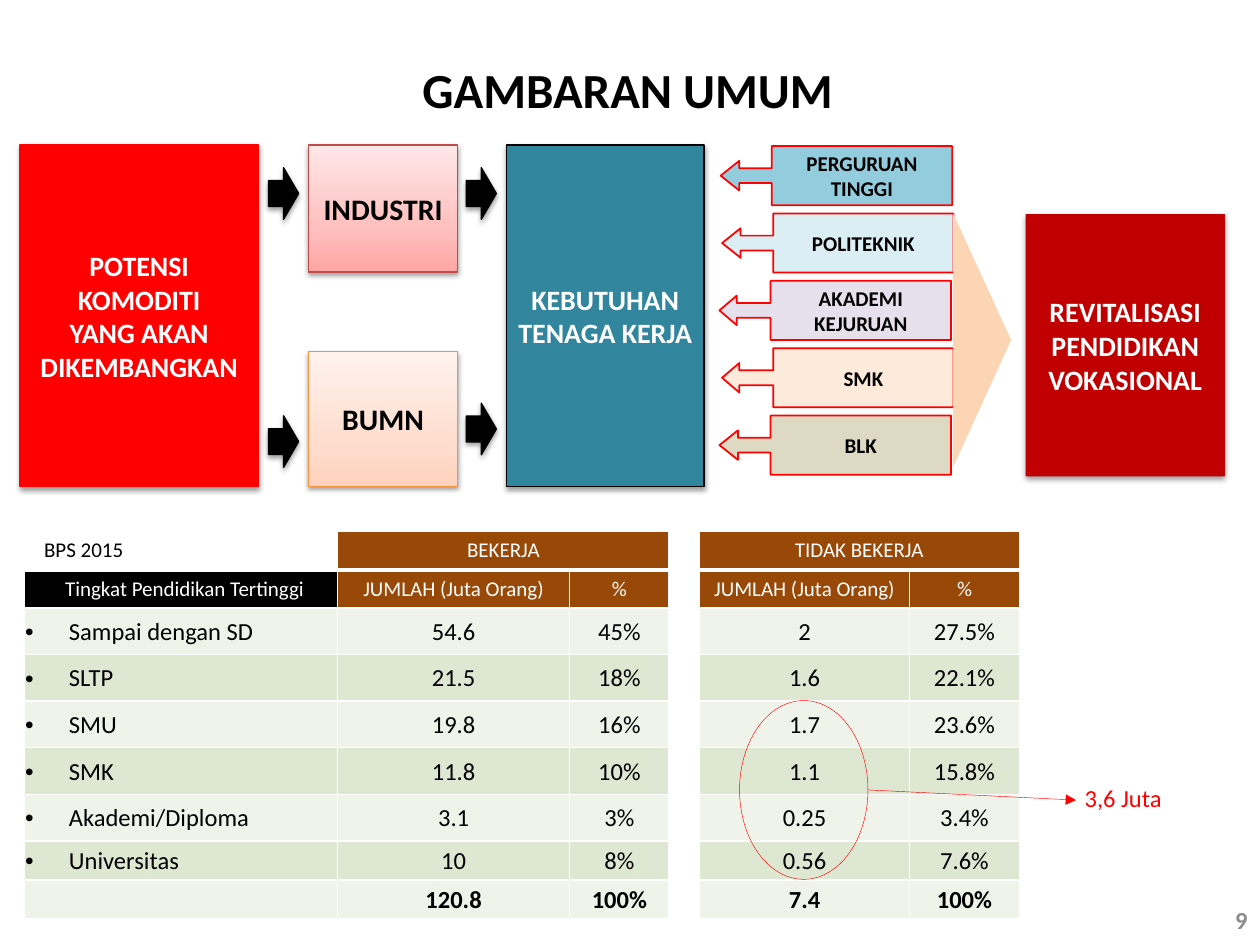
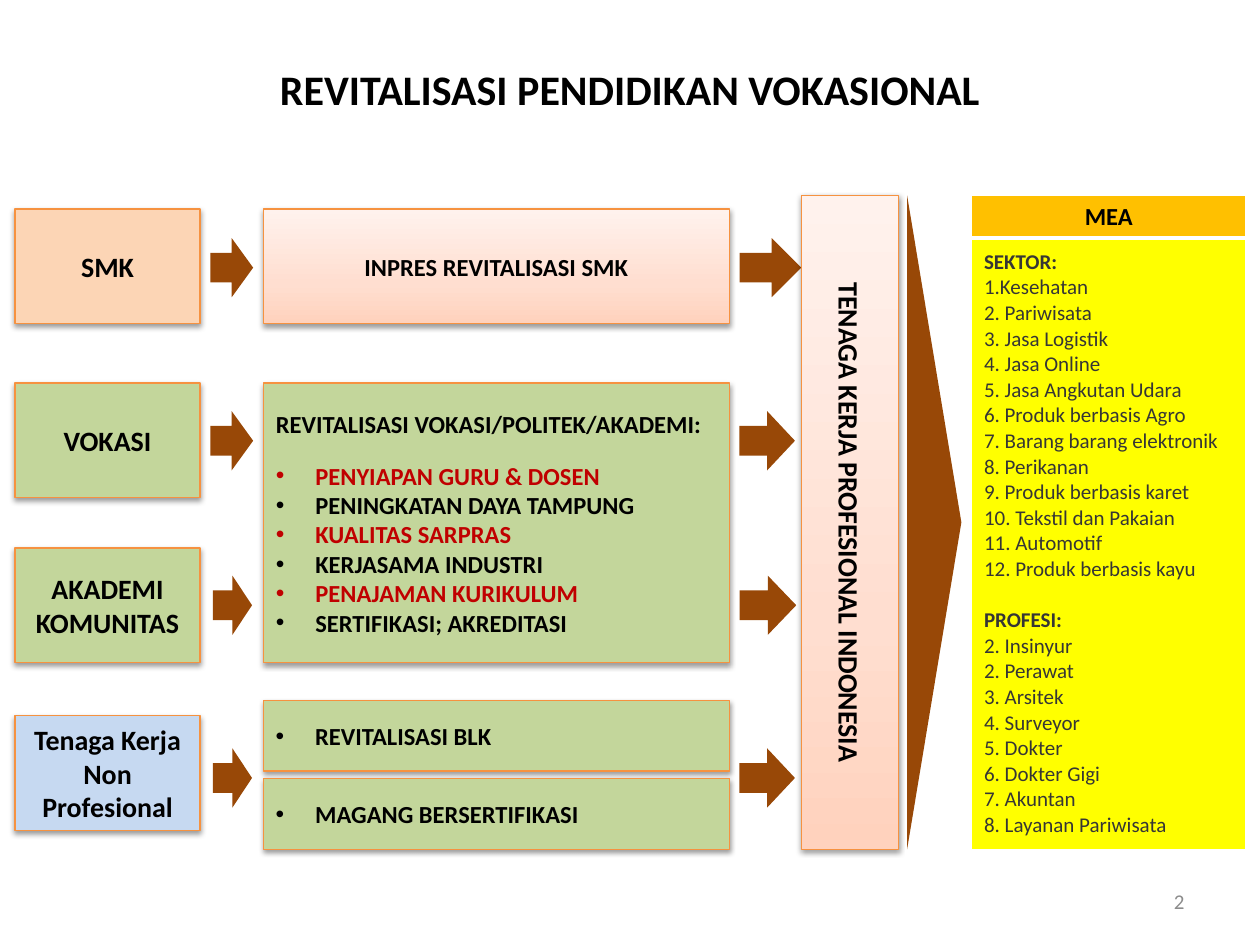
from copy import deepcopy
from dataclasses import dataclass
from typing import Any, NamedTuple

from lxml import etree
from pptx import Presentation
from pptx.dml import color
from pptx.enum import shapes, text
from pptx.oxml import ns
from pptx.util import Pt

# Shared look
FONT = "Calibri"
BLACK, WHITE, RED, BROWN = "000000", "FFFFFF", "FF0000", "984807"
GREEN, ORANGE, GREY, DARK = "C3D69B", "F69240", "8C8C8C", "C00000"
INK, LIGHT, SHADE = "363635", "EFF3EA", "DEE7D1"
PEACH = ("FFD2BD", "FFDED0", "FFF2ED")
ROSE = ("FFA6A5", "FFC0BF", "FFE7E7")
STOPS = (0, 0.35, 1)
KIND = shapes.MSO_SHAPE
LEFT, MID, RIGHT = text.PP_ALIGN.LEFT, text.PP_ALIGN.CENTER, text.PP_ALIGN.RIGHT
CENTER, TOP = text.MSO_ANCHOR.MIDDLE, text.MSO_ANCHOR.TOP
HANG = 22.5


class Area(NamedTuple):
    left: float
    top: float
    width: float
    height: float


class Line(NamedTuple):
    text: str
    size: float = 14
    ink: str = BLACK
    bold: bool = True
    align: Any = MID
    mark: str = ""
    hang: float = 0
    inset: float = 0
    before: float = 0


@dataclass
class Box:
    area: Area
    lines: list[Line]
    fill: Any
    edge: str | None = ORANGE
    kind: Any = KIND.RECTANGLE
    width: float = 0.75
    shade: bool = True
    turn: float = 0
    adjust: tuple = ()


def hue(code: str) -> color.RGBColor:
    return color.RGBColor.from_string(code)


def put(item: Any, **values: Any) -> None:
    for name, value in values.items():
        setattr(item, name, value)


def sub(node: Any, tag: str, **values: Any) -> Any:
    return etree.SubElement(node, ns.qn(tag), {k: str(v) for k, v in values.items()})


def place(shape: Any, area: Area) -> None:
    put(shape, **{name: Pt(size) for name, size in area._asdict().items()})


# Text
def write(frame: Any, lines: list[Line]) -> None:
    for i, line in enumerate(lines):
        para = frame.paragraphs[0] if i == 0 else frame.add_paragraph()
        put(para, alignment=line.align, space_before=Pt(line.before))
        props = para._p.get_or_add_pPr()
        props.set("marL", str(Pt(line.hang + line.inset)))
        props.set("indent", str(Pt(-line.hang)))
        if line.mark == "•":
            sub(props, "a:buFont", typeface="Arial")
            sub(props, "a:buChar", char=line.mark)
        elif line.mark:
            sub(props, "a:buAutoNum", type=line.mark)
        else:
            sub(props, "a:buNone")
        if line.text:
            run = para.add_run()
            run.text = line.text
            put(run.font, name=FONT, size=Pt(line.size), bold=line.bold)
            run.font.color.rgb = hue(line.ink)
        else:
            sub(para._p, "a:endParaRPr", sz=1000)


def frame(shape: Any, lines: list[Line], anchor: Any = CENTER) -> None:
    side = 5 if lines[0].align == MID else 7.2
    put(shape.text_frame, word_wrap=True, vertical_anchor=anchor,
        auto_size=text.MSO_AUTO_SIZE.NONE,
        margin_left=Pt(side), margin_right=Pt(side),
        margin_top=Pt(3.6), margin_bottom=Pt(3.6))
    write(shape.text_frame, lines)


def note(slide: Any, area: Area, line: Line, anchor: Any = CENTER) -> None:
    shape = slide.shapes.add_textbox(*map(Pt, area))
    frame(shape, [line], anchor)


def title(slide: Any, area: Area, words: str, size: float) -> None:
    place(slide.shapes.title, area)
    frame(slide.shapes.title, [Line(words, size)], TOP)


# Shapes
def paint(shape: Any, fill: Any, edge: str | None, width: float, shade: bool) -> None:
    if fill is None:
        shape.fill.background()
    elif isinstance(fill, str):
        shape.fill.solid()
        shape.fill.fore_color.rgb = hue(fill)
    else:
        shape.fill.gradient()
        shape.fill.gradient_angle = 90
        stops = shape._element.spPr.find(".//" + ns.qn("a:gsLst"))
        stops.insert(1, deepcopy(stops[0]))
        for stop, code, spot in zip(shape.fill.gradient_stops, fill, STOPS):
            stop.color.rgb = hue(code)
            stop.position = spot
    if edge:
        shape.line.color.rgb = hue(edge)
        shape.line.width = Pt(width)
    else:
        shape.line.fill.background()
    shape.shadow.inherit = False
    if shade:
        effects = shape._element.spPr.find(ns.qn("a:effectLst"))
        cast = sub(effects, "a:outerShdw", blurRad=Pt(3.1), dist=Pt(1.6),
                   dir=5400000, rotWithShape=0)
        sub(sub(cast, "a:srgbClr", val=BLACK), "a:alpha", val=38000)


def draw(slide: Any, box: Box) -> Any:
    shape = slide.shapes.add_shape(box.kind, *map(Pt, box.area))
    shape.rotation = box.turn
    for i, value in enumerate(box.adjust):
        shape.adjustments[i] = value
    paint(shape, box.fill, box.edge, box.width, box.shade)
    if box.lines:
        frame(shape, box.lines)
    return shape


def arrow(slide: Any, area: Area, fill: str, edge: str | None = None) -> None:
    draw(slide, Box(area, [], fill, edge, KIND.RIGHT_ARROW, shade=bool(edge)))


def wedge(slide: Any, area: Area, fill: str) -> None:
    draw(slide, Box(area, [], fill, None, KIND.ISOSCELES_TRIANGLE, shade=False, turn=90))


# Tables
def grid(slide: Any, left: float, top: float, cols: list[float], rows: list[float]) -> Any:
    area = Area(left, top, sum(cols), sum(rows))
    table = slide.shapes.add_table(len(rows), len(cols), *map(Pt, area)).table
    for col, size in zip(table.columns, cols):
        col.width = Pt(size)
    for row, size in zip(table.rows, rows):
        row.height = Pt(size)
    return table


def cell(item: Any, lines: list[Line], fill: str, base: float = 1, tight: bool = False) -> None:
    item.fill.solid()
    item.fill.fore_color.rgb = hue(fill)
    item.vertical_anchor = CENTER
    if tight:
        put(item, margin_left=Pt(0.7), margin_right=Pt(0.7),
            margin_top=Pt(0.7), margin_bottom=Pt(0))
    props = item._tc.get_or_add_tcPr()
    for i, side in enumerate("LRTB"):
        edge = sub(props, f"a:ln{side}", w=Pt(base if side == "B" else 1))
        sub(sub(edge, "a:solidFill"), "a:srgbClr", val=WHITE)
        props.insert(i, edge)
    write(item.text_frame, lines)


# Slide 1: overview
SCHOOLS = [("PERGURUAN TINGGI", "93CDDD", 411.8, 0.313),
           ("POLITEKNIK", "DBEEF4", 412.6, 0.313),
           ("AKADEMI KEJURUAN", "E6E0EC", 411.1, 0.292),
           ("SMK", "FDEADA", 412.6, 0.292),
           ("BLK", "DDD9C3", 411.1, 0.313)]
HEADS = [["BPS 2015", "BEKERJA", "", "", "TIDAK BEKERJA", ""],
         ["Tingkat Pendidikan Tertinggi", "JUMLAH (Juta Orang)", "%", "",
          "JUMLAH (Juta Orang)", "%"]]
LEVELS = [["Sampai dengan SD", "54.6", "45%", "", "2", "27.5%"],
          ["SLTP", "21.5", "18%", "", "1.6", "22.1%"],
          ["SMU", "19.8", "16%", "", "1.7", "23.6%"],
          ["SMK", "11.8", "10%", "", "1.1", "15.8%"],
          ["Akademi/Diploma", "3.1", "3%", "", "0.25", "3.4%"],
          ["Universitas", "10", "8%", "", "0.56", "7.6%"],
          ["", "120.8", "100%", "", "7.4", "100%"]]
GAP = 3


def jobs(slide: Any) -> None:
    table = grid(slide, 13.7, 303.8, [179.3, 132.5, 56.9, 17.3, 120.2, 62.6],
                 [17.3] * 2 + [26.6] * 5 + [22.3] * 2)
    for col in (1, 4):
        table.cell(0, col).merge(table.cell(0, col + 1))
    for r, row in enumerate(HEADS):
        for c, words in enumerate(row):
            fill = WHITE if c == GAP else BROWN if c else (WHITE, BLACK)[r]
            first = r == 0 and c == 0
            line = Line(words, 12, BLACK if first else WHITE, False,
                        LEFT if first else MID, inset=0 if c else 4.3)
            cell(table.cell(r, c), [line], fill, 1 if r else 3)
    for r, row in enumerate(LEVELS):
        for c, words in enumerate(row):
            line = Line(words, bold=r == len(LEVELS) - 1)
            if c == 0 and words:
                line = line._replace(align=LEFT, mark="•", hang=25)
            fill = WHITE if c == GAP else SHADE if r % 2 else LIGHT
            cell(table.cell(r + len(HEADS), c), [line], fill, tight=c != GAP)


def first(deck: Any) -> None:
    slide = deck.slides.add_slide(deck.slide_layouts[5])
    title(slide, Area(-1.4, 30.2, 720, 41), "GAMBARAN UMUM", 28)
    note(slide, Area(552.2, 511.2, 167.8, 28.8), Line("9", 14, GREY, align=RIGHT))
    goods = [Line(words, 16, WHITE) for words in
             ("POTENSI", "KOMODITI", "YANG AKAN DIKEMBANGKAN")]
    for box in (
        Box(Area(11.5, 82.8, 136.1, 195.1), goods, RED, RED),
        Box(Area(176.4, 82.8, 85, 72.7), [Line("INDUSTRI", 17)], ROSE, "BF4C48"),
        Box(Area(176.4, 200.9, 85, 77), [Line("BUMN", 17)], PEACH),
        Box(Area(289.4, 82.8, 113, 195.1),
            [Line("KEBUTUHAN TENAGA KERJA", 16, WHITE)], "31859C", BLACK),
        Box(Area(586.1, 122.4, 113.8, 149.8),
            [Line("REVITALISASI PENDIDIKAN VOKASIONAL", 16, WHITE)], DARK, None),
    ):
        draw(slide, box)
    for left, top in ((153.4, 95.8), (153.4, 237.6), (266.4, 95.8), (266.4, 230.4)):
        arrow(slide, Area(left, top, 17.3, 29.5), BLACK, BLACK)
    for i, (name, fill, left, head) in enumerate(SCHOOLS):
        draw(slide, Box(Area(left, 83.5 + 38.5 * i, 132.3, 33.8), [Line(name, 12)],
                        fill, RED, KIND.LEFT_ARROW_CALLOUT, 1, False,
                        adjust=(0.25, 0.25, head, 0.779)))
    jobs(slide)
    wedge(slide, Area(488.9, 177.8, 144.7, 33.1), "FCD5B5")

    # Ring around the idle graduates, with its total
    draw(slide, Box(Area(422.6, 400.3, 73.4, 102.2), [], None, RED, KIND.OVAL, 0.25, False))
    link = slide.shapes.add_connector(shapes.MSO_CONNECTOR.STRAIGHT,
                                      *map(Pt, (496.1, 451.4, 614.9, 457.2)))
    link.line.color.rgb = hue(RED)
    link.line.width = Pt(0.25)
    sub(link.line._get_or_add_ln(), "a:tailEnd", type="triangle")
    sub(link._element.spPr, "a:effectLst")
    note(slide, Area(612.7, 444.2, 73.4, 24.5), Line("3,6 Juta", 14, RED, False, LEFT), TOP)


# Slide 2: revival of vocational schools
class Track(NamedTuple):
    names: list[str]
    fill: str
    top: float
    tip: float
    near: tuple
    far: float


TRACKS = [Track(["SMK"], "FCD5B5", 119.5, 136.1, (120.2, 24.5), 35.3),
          Track(["VOKASI"], GREEN, 218.9, 235, (120.2, 24.5), 31.7),
          Track(["AKADEMI KOMUNITAS"], GREEN, 313.2, 329, (121.7, 22.3), 32.4),
          Track(["Tenaga Kerja", "Non Profesional"], "C6D9F1", 409, 427.7,
                (121.7, 22.3), 31.7)]
STEPS = ["PENYIAPAN GURU & DOSEN", "PENINGKATAN DAYA TAMPUNG", "KUALITAS SARPRAS",
         "KERJASAMA INDUSTRI", "PENAJAMAN KURIKULUM", "SERTIFIKASI; AKREDITASI"]
FIELDS = {"SEKTOR:": ["Kesehatan", "2. Pariwisata", "3. Jasa Logistik", "4. Jasa Online",
                      "5. Jasa Angkutan Udara", "6. Produk berbasis Agro",
                      "7. Barang barang elektronik", "8. Perikanan",
                      "9. Produk berbasis karet", "10. Tekstil dan Pakaian",
                      "11. Automotif", "12. Produk berbasis kayu"],
          "PROFESI:": [" Insinyur", "2. Perawat", "3. Arsitek", "4. Surveyor", "5. Dokter",
                       "6. Dokter Gigi", "7. Akuntan", "8. Layanan Pariwisata"]}


def second(deck: Any) -> None:
    slide = deck.slides.add_slide(deck.slide_layouts[1])
    title(slide, Area(0, 32.4, 720, 44.6), "REVITALISASI PENDIDIKAN VOKASIONAL", 24)
    note(slide, Area(516.2, 500.4, 167.8, 28.8), Line("2", 12, GREY, False, RIGHT))
    for track in TRACKS:
        draw(slide, Box(Area(8.6, track.top, 105.8, 65.5),
                        [Line(name, 16) for name in track.names], track.fill))
        for left, width in (track.near, (422.6, track.far)):
            arrow(slide, Area(left, track.tip, width, 33.8), BROWN)

    # Programmes
    draw(slide, Box(Area(150.5, 119.5, 266.4, 65.5), [Line("INPRES REVITALISASI SMK")], PEACH))
    body = slide.placeholders[1]
    place(body, Area(150.5, 218.9, 266.4, 159.8))
    paint(body, GREEN, ORANGE, 0.75, True)
    frame(body, [Line("REVITALISASI VOKASI/POLITEK/AKADEMI:", align=LEFT)] + [
        Line(step, ink=BLACK if i % 2 else DARK, align=LEFT, mark="•", hang=HANG,
             before=0 if i else 12.8) for i, step in enumerate(STEPS)])
    for i, name in enumerate(("REVITALISASI BLK", "MAGANG BERSERTIFIKASI")):
        draw(slide, Box(Area(150.5, 400.3 + 44.7 * i, 266.4, 40.3),
                        [Line(name, align=LEFT, mark="•", hang=HANG)], GREEN))

    # Workforce and market
    bar = draw(slide, Box(Area(457.9, 111.6, 55.4, 373.7),
                          [Line("TENAGA KERJA PROFESIONAL INDONESIA", 16)], PEACH))
    bar.text_frame._txBody.bodyPr.set("vert", "vert")
    wedge(slide, Area(347, 283, 373.7, 31), BROWN)
    lines = []
    for head, names in FIELDS.items():
        lines.append(Line(head, 12, INK, True, LEFT, before=14.6 if lines else 0))
        lines += [Line(name, 12, INK, False, LEFT, "" if i else "arabicPeriod")
                  for i, name in enumerate(names)]
    table = grid(slide, 555.1, 111.6, [157], [24.5, 349.2])
    cell(table.cell(0, 0), [Line("MEA")], "FFC000", 3)
    cell(table.cell(1, 0), lines, "FFFF00")


def main() -> None:
    deck = Presentation()
    put(deck, slide_width=Pt(720), slide_height=Pt(540))
    first(deck)
    second(deck)
    deck.save("out.pptx")


if __name__ == "__main__":
    main()
